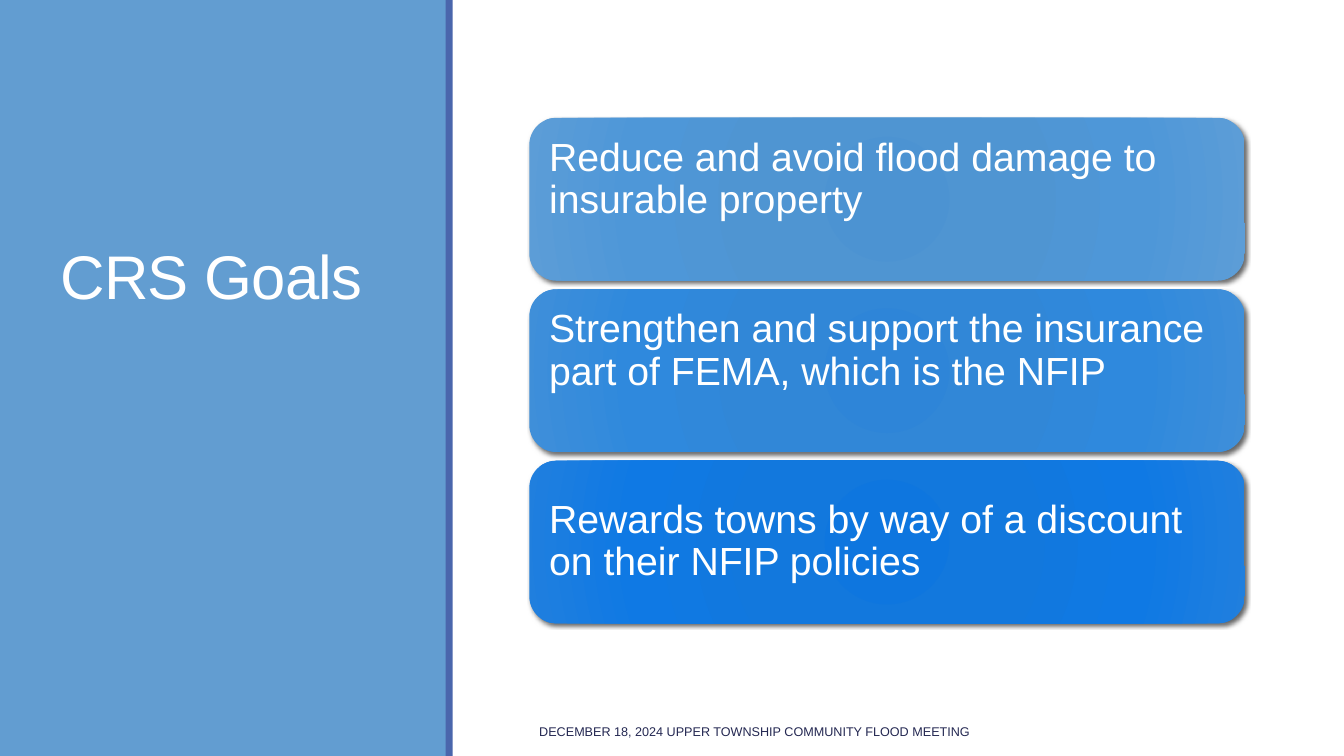
from lxml.etree import SubElement
from pptx import Presentation
from pptx.dml.color import RGBColor
from pptx.enum.shapes import MSO_SHAPE as Shape
from pptx.enum.text import MSO_ANCHOR as Anchor, PP_ALIGN as Align
from pptx.oxml.ns import qn
from pptx.util import Cm, Pt

SKY = RGBColor(0x62, 0x9D, 0xD1)
INDIGO = RGBColor(0x4A, 0x66, 0xAC)
NAVY = RGBColor(0x24, 0x28, 0x52)
WHITE = RGBColor(0xFF, 0xFF, 0xFF)
BLACK = RGBColor(0, 0, 0)

GRADIENT_STOPS = (0, 34, 70, 100)
GOALS = [
    ("Reduce and avoid flood damage to insurable property", Anchor.TOP,
     [RGBColor(0x4C, 0x93, 0xD2), RGBColor(0x4F, 0x95, 0xD2),
      RGBColor(0x4E, 0x97, 0xD8), RGBColor(0x5C, 0x9D, 0xD7)]),
    ("Strengthen and support the insurance part of FEMA, which is the NFIP", Anchor.TOP,
     [RGBColor(0x2E, 0x85, 0xD8), RGBColor(0x31, 0x87, 0xD7),
      RGBColor(0x2F, 0x89, 0xDD), RGBColor(0x3F, 0x8F, 0xD9)]),
    ("Rewards towns by way of a discount on their NFIP policies", Anchor.MIDDLE,
     [RGBColor(0x0E, 0x76, 0xDF), RGBColor(0x12, 0x78, 0xDD),
      RGBColor(0x0F, 0x79, 0xE4), RGBColor(0x20, 0x7F, 0xDE)]),
]
CARD_TOP, CARD_HEIGHT, CARD_PITCH = 2.97, 4.1, 4.32


class GoalsSlide:
    font = "Arial"

    def __init__(self, slide):
        self.slide = slide

    def panel(self, left, top, width, height, color):
        panel = self.slide.shapes.add_shape(
            Shape.RECTANGLE, Cm(left), Cm(top), Cm(width), Cm(height))
        panel.shadow.inherit = False
        panel.fill.solid()
        panel.fill.fore_color.rgb = color
        panel.line.fill.background()

    def fill_text(self, frame, text, size, color, anchor, line_spacing=1.0):
        frame.word_wrap = True
        frame.vertical_anchor = anchor
        paragraph = frame.paragraphs[0]
        paragraph.alignment = Align.LEFT
        paragraph.line_spacing = line_spacing
        run = paragraph.add_run()
        run.text = text
        run.font.name = self.font
        run.font.size = Pt(size)
        run.font.color.rgb = color
        return run

    def label(self, left, top, width, height, *text_style):
        box = self.slide.shapes.add_textbox(Cm(left), Cm(top), Cm(width), Cm(height))
        return self.fill_text(box.text_frame, *text_style)

    def card(self, left, top, width, height, text, anchor, colors):
        card = self.slide.shapes.add_shape(
            Shape.ROUNDED_RECTANGLE, Cm(left), Cm(top), Cm(width), Cm(height))
        card.line.fill.background()
        self.radial_fill(card, colors)
        self.drop_shadow(card)
        frame = card.text_frame
        frame.margin_left = frame.margin_right = Cm(0.3)
        frame.margin_top = frame.margin_bottom = Cm(0.3)
        self.fill_text(frame, text, 28, WHITE, anchor, 0.9)

    def radial_fill(self, card, colors):
        card.fill.gradient()
        gradient = card._element.spPr.find(qn("a:gradFill"))
        for part in list(gradient):
            gradient.remove(part)
        stops = SubElement(gradient, qn("a:gsLst"))
        for percent, color in zip(GRADIENT_STOPS, colors):
            stop = SubElement(stops, qn("a:gs"), pos=str(percent * 1000))
            SubElement(stop, qn("a:srgbClr"), val=str(color))
        circle = SubElement(gradient, qn("a:path"), {"path": "circle"})
        SubElement(circle, qn("a:fillToRect"),
                   {side: "100000" for side in "ltrb"})

    def drop_shadow(self, card):
        card.shadow.inherit = False
        effects = card._element.spPr.find(qn("a:effectLst"))
        shadow = SubElement(effects, qn("a:outerShdw"), blurRad=str(Pt(3)),
                            dist=str(Pt(2)), dir=str(45 * 60000), rotWithShape="0")
        color = SubElement(shadow, qn("a:srgbClr"), val=str(BLACK))
        SubElement(color, qn("a:alpha"), val="60000")


def main():
    deck = Presentation()
    deck.slide_width, deck.slide_height = Cm(33.87), Cm(19.05)
    page = GoalsSlide(deck.slides.add_slide(deck.slide_layouts[6]))

    page.panel(0, 0, 11.25, 19.05, SKY)
    page.panel(11.23, 0, 0.18, 19.05, INDIGO)
    title = page.label(1.27, 1.65, 8.89, 6.35, "CRS Goals", 44, WHITE, Anchor.BOTTOM, 0.85)
    title._r.get_or_add_rPr().set("spc", "-50")

    for row, goal in enumerate(GOALS):
        page.card(13.34, CARD_TOP + row * CARD_PITCH, 18.03, CARD_HEIGHT, *goal)

    page.label(13.34, 17.93, 12.9, 1.02,
               "DECEMBER 18, 2024 UPPER TOWNSHIP COMMUNITY FLOOD MEETING",
               9, NAVY, Anchor.MIDDLE)
    deck.save("out.pptx")


if __name__ == "__main__":
    main()
